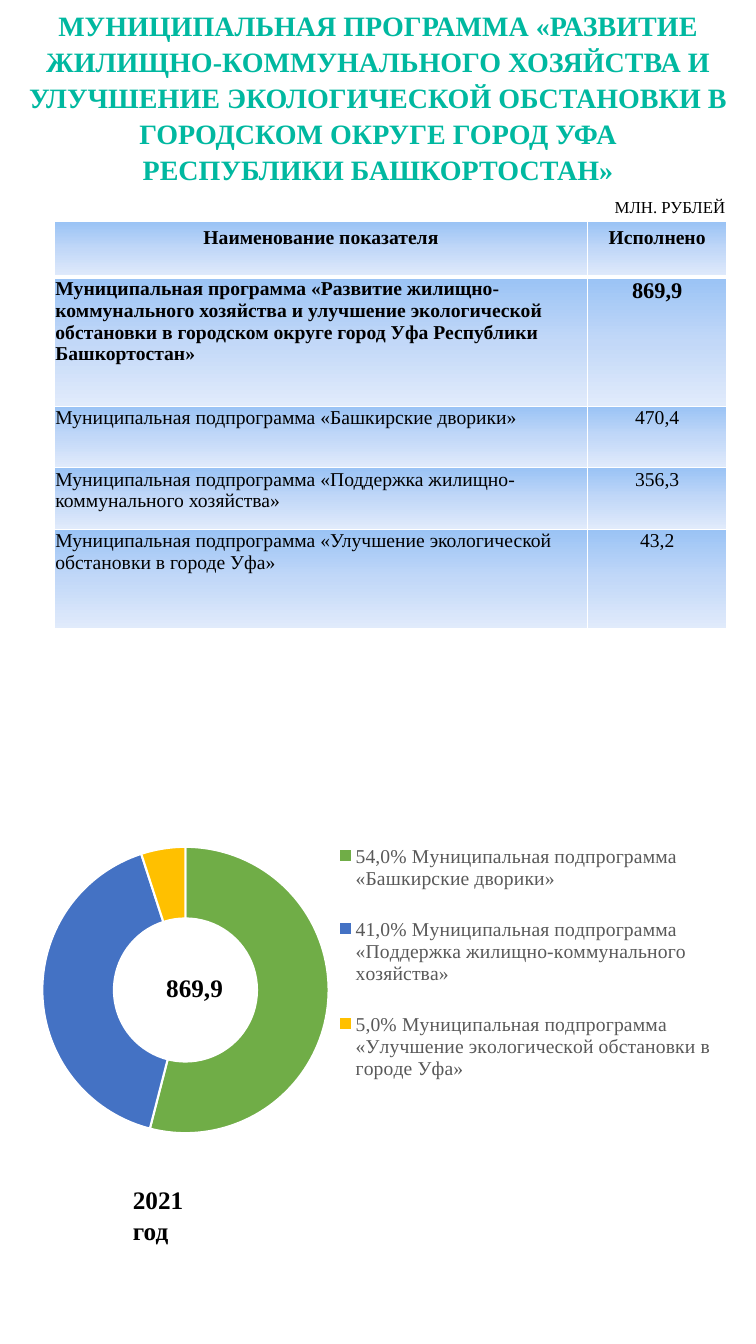
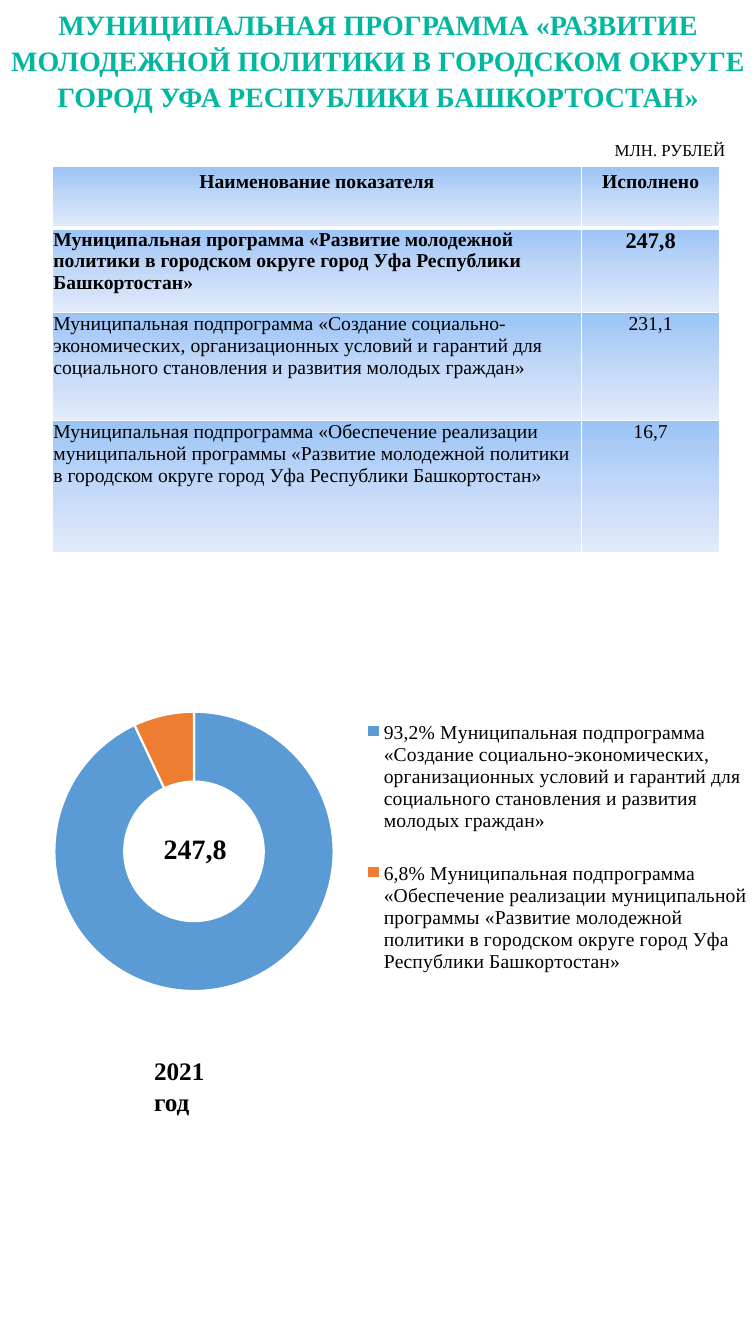
from dataclasses import dataclass

from lxml.etree import SubElement
from pptx import Presentation
from pptx.chart.data import CategoryChartData
from pptx.dml.color import RGBColor
from pptx.enum.chart import XL_CHART_TYPE, XL_LEGEND_POSITION
from pptx.enum.text import MSO_ANCHOR, PP_ALIGN
from pptx.oxml.ns import qn
from pptx.util import Inches, Pt


@dataclass(frozen=True)
class Theme:
    font: str = "Times New Roman"
    title: str = "00B8A0"
    ink: str = "000000"
    muted: str = "595959"
    white: str = "FFFFFF"
    cell_gradient: tuple = ((0, "9AC3F5"), (50, "C2D8F8"), (100, "E1EBFB"))
    title_size: int = 20
    label_size: int = 18
    total_size: int = 16
    body_size: int = 14
    unit_size: int = 12


@dataclass(frozen=True)
class Box:
    left: float
    top: float
    width: float
    height: float

    def lengths(self):
        return [Inches(v) for v in (self.left, self.top, self.width, self.height)]

    def fractions_of(self, outer):
        """Position and size of this box as shares of the outer one."""
        return {"x": (self.left - outer.left) / outer.width,
                "y": (self.top - outer.top) / outer.height,
                "w": self.width / outer.width,
                "h": self.height / outer.height}


THEME = Theme()


def set_font(font, size, color=THEME.ink, bold=False):
    values = {"name": THEME.font, "size": Pt(size), "bold": bold}
    for name, value in values.items():
        setattr(font, name, value)
    font.color.rgb = RGBColor.from_string(color)


def set_margins(holder, left, top, right, bottom):
    margins = {"left": left, "top": top, "right": right, "bottom": bottom}
    for side, value in margins.items():
        setattr(holder, f"margin_{side}", Inches(value))


def add_title(page, text, height):
    title = page.shapes.title
    title.left, title.top, title.width, title.height = Box(0, 0, 7.5, height).lengths()
    frame = title.text_frame
    frame.text = text
    frame.word_wrap = True
    frame.vertical_anchor = MSO_ANCHOR.MIDDLE
    para = frame.paragraphs[0]
    formats = {"alignment": PP_ALIGN.CENTER, "line_spacing": 1.07,
               "space_before": Pt(0), "space_after": Pt(8)}
    for name, value in formats.items():
        setattr(para, name, value)
    for span in para.runs:
        set_font(span.font, THEME.title_size, THEME.title, bold=True)


def add_label(page, box, text, size, bold=True, align=PP_ALIGN.LEFT,
              anchor=MSO_ANCHOR.TOP, wrap=True):
    frame = page.shapes.add_textbox(*box.lengths()).text_frame
    frame.text = text
    frame.word_wrap = wrap
    frame.vertical_anchor = anchor
    para = frame.paragraphs[0]
    para.alignment = align
    set_font(para.runs[0].font, size, bold=bold)


def style_cell(cell, border_widths):
    """White borders, given by side in points, and the vertical gradient."""
    properties = cell._tc.get_or_add_tcPr()
    for side, width in border_widths.items():
        line = SubElement(properties, qn(f"a:ln{side}"), w=str(Pt(width)))
        fill = SubElement(line, qn("a:solidFill"))
        SubElement(fill, qn("a:srgbClr"), val=THEME.white)
    gradient = SubElement(properties, qn("a:gradFill"), rotWithShape="1")
    stops = SubElement(gradient, qn("a:gsLst"))
    for position, color in THEME.cell_gradient:
        stop = SubElement(stops, qn("a:gs"), pos=str(position * 1000))
        SubElement(stop, qn("a:srgbClr"), val=color)
    SubElement(gradient, qn("a:lin"), ang="5400000", scaled="0")


def add_budget_table(page, left, top, column_widths, row_heights, rows):
    box = Box(left, top, sum(column_widths), sum(row_heights))
    table = page.shapes.add_table(len(rows), 2, *box.lengths()).table
    for column, width in zip(table.columns, column_widths):
        column.width = Inches(width)
    for r, (height, texts) in enumerate(zip(row_heights, rows)):
        table.rows[r].height = Inches(height)
        for c, text in enumerate(texts):
            cell = table.cell(r, c)
            cell.text = text
            if r > 0:
                set_margins(cell, 0.01, 0.01, 0.01, 0)
            style_cell(cell, {"L": 1, "R": 1, "T": 3 if r == 1 else 1,
                              "B": 3 if r == 0 else 1})
            para = cell.text_frame.paragraphs[0]
            centred = r == 0 or c == 1
            para.alignment = PP_ALIGN.CENTER if centred else PP_ALIGN.LEFT
            is_total = (r, c) == (1, 1)
            size = THEME.total_size if is_total else THEME.body_size
            set_font(para.runs[0].font, size, bold=r < 2)


def set_layout(element, fractions, inner=False):
    """Fix the place of a plot area or a legend inside its chart."""
    for old in element.findall(qn("c:layout")):
        element.remove(old)
    layout = SubElement(element, qn("c:layout"))
    manual = SubElement(layout, qn("c:manualLayout"))
    if inner:
        SubElement(manual, qn("c:layoutTarget"), val="inner")
    for axis in "xy":
        SubElement(manual, qn(f"c:{axis}Mode"), val="edge")
    for name, value in fractions.items():
        SubElement(manual, qn(f"c:{name}"), val=f"{value:.4f}")
    element.remove(layout)
    position = element.find(qn("c:legendPos"))
    element.insert(0 if position is None else 1, layout)


def add_share_chart(page, box, ring, legend_box, names, values, colors, legend_color):
    data = CategoryChartData()
    data.categories = names
    data.add_series("Series 1", values)
    chart = page.shapes.add_chart(XL_CHART_TYPE.DOUGHNUT, *box.lengths(), data).chart
    set_font(chart.font, 10)
    chart.has_title = False
    chart.has_legend = True
    legend = chart.legend
    legend.position = XL_LEGEND_POSITION.RIGHT
    legend.include_in_layout = False
    set_font(legend.font, THEME.body_size, legend_color)
    set_layout(legend._element, legend_box.fractions_of(box))

    plot = chart.plots[0]
    plot.vary_by_categories = True
    plot._element.find(qn("c:holeSize")).set("val", "75")
    set_layout(plot._element.getparent(), ring.fractions_of(box), inner=True)
    for index, color in enumerate(colors):
        style = plot.series[0].points[index].format
        style.fill.solid()
        style.fill.fore_color.rgb = RGBColor.from_string(color)
        style.line.color.rgb = RGBColor.from_string(THEME.white)
        style.line.width = Pt(1.5)


def add_program_page(deck, title, title_height, unit_top, table, chart, shares,
                     total_label, year_at):
    page = deck.slides.add_slide(deck.slide_layouts[5])
    add_title(page, title, title_height)
    header = ("Наименование показателя", "Исполнено")
    total, *parts = table["rows"]
    names = [f"{share} {name}" for share, (name, _) in zip(shares, parts)]
    add_share_chart(page, names=names, **chart)
    add_budget_table(page, **{**table, "rows": [header, total, *parts]})
    add_label(page, text=total[1], **total_label)
    add_label(page, Box(*year_at, 1, 0.45), "2021 год", THEME.label_size, wrap=False)
    add_label(page, Box(6, unit_top, 1.5, 0.3), "МЛН. РУБЛЕЙ", THEME.unit_size, bold=False)


def add_housing_page(deck):
    add_program_page(
        deck,
        title="МУНИЦИПАЛЬНАЯ ПРОГРАММА «РАЗВИТИЕ ЖИЛИЩНО-КОММУНАЛЬНОГО ХОЗЯЙСТВА И "
              "УЛУЧШЕНИЕ ЭКОЛОГИЧЕСКОЙ ОБСТАНОВКИ В ГОРОДСКОМ ОКРУГЕ ГОРОД УФА\v"
              "РЕСПУБЛИКИ БАШКОРТОСТАН»",
        title_height=1.9,
        unit_top=1.9,
        table={
            "left": 0.54, "top": 2.2, "column_widths": (5.29, 1.38),
            "row_heights": (0.55, 1.28, 0.61, 0.61, 0.99),
            "rows": [
                ("Муниципальная программа «Развитие жилищно-коммунального хозяйства "
                 "и улучшение экологической обстановки в городском округе город Уфа "
                 "Республики Башкортостан»", "869,9"),
                ("Муниципальная подпрограмма «Башкирские дворики»", "470,4"),
                ("Муниципальная подпрограмма «Поддержка жилищно-коммунального "
                 "хозяйства»", "356,3"),
                ("Муниципальная подпрограмма «Улучшение экологической обстановки "
                 "в городе Уфа»", "43,2"),
            ],
        },
        chart={
            "box": Box(0.28, 7.4, 7.12, 5.93), "ring": Box(0.42, 8.4, 2.84, 2.84),
            "legend_box": Box(3.26, 8.1, 3.9, 2.9), "values": (54, 41, 5),
            "colors": ("70AD47", "4472C4", "FFC000"), "legend_color": THEME.muted,
        },
        shares=("54,0%", "41,0%", "5,0%"),
        total_label={"box": Box(1.44, 9.59, 0.87, 0.4), "size": THEME.label_size,
                     "align": PP_ALIGN.RIGHT},
        year_at=(1.22, 11.7),
    )


def add_youth_page(deck):
    add_program_page(
        deck,
        title="МУНИЦИПАЛЬНАЯ ПРОГРАММА «РАЗВИТИЕ МОЛОДЕЖНОЙ ПОЛИТИКИ В ГОРОДСКОМ "
              "ОКРУГЕ ГОРОД УФА РЕСПУБЛИКИ БАШКОРТОСТАН»",
        title_height=1.18,
        unit_top=1.34,
        table={
            "left": 0.52, "top": 1.65, "column_widths": (5.25, 1.37),
            "row_heights": (0.61, 0.84, 1.07, 1.31),
            "rows": [
                ("Муниципальная программа «Развитие молодежной политики в городском "
                 "округе город Уфа Республики Башкортостан»", "247,8"),
                ("Муниципальная подпрограмма «Создание социально-экономических, "
                 "организационных условий и гарантий для социального становления "
                 "и развития молодых граждан»", "231,1"),
                ("Муниципальная подпрограмма «Обеспечение реализации муниципальной "
                 "программы «Развитие молодежной политики в городском округе город "
                 "Уфа Республики Башкортостан»", "16,7"),
            ],
        },
        chart={
            "box": Box(0, 6.21, 7.5, 4.7), "ring": Box(0.54, 7.06, 2.77, 2.77),
            "legend_box": Box(3.58, 6.85, 3.9, 3.1), "values": (93, 7),
            "colors": ("5B9BD5", "ED7D31"), "legend_color": THEME.ink,
        },
        shares=("93,2%", "6,8%"),
        total_label={"box": Box(1.24, 8.05, 1.39, 0.73), "size": THEME.title_size,
                     "align": PP_ALIGN.CENTER, "anchor": MSO_ANCHOR.MIDDLE},
        year_at=(1.43, 10.42),
    )


def main():
    deck = Presentation()
    deck.slide_width, deck.slide_height = Inches(7.5), Inches(13.33)
    add_housing_page(deck)
    add_youth_page(deck)
    deck.save("out.pptx")


if __name__ == "__main__":
    main()
